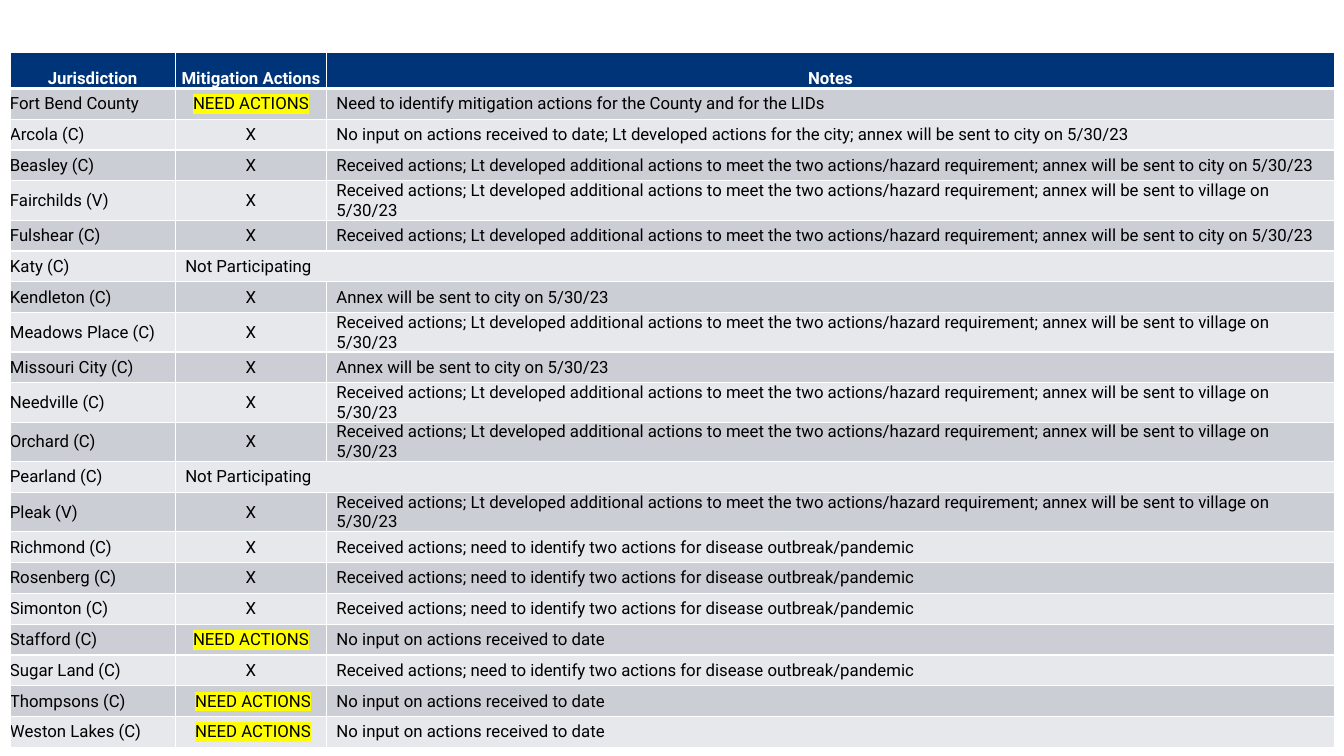
from dataclasses import dataclass

from lxml.etree import SubElement
from pptx import Presentation
from pptx.dml.color import RGBColor
from pptx.enum.text import MSO_ANCHOR, PP_ALIGN
from pptx.oxml import parse_xml
from pptx.oxml.ns import qn
from pptx.util import Cm, Pt


@dataclass(frozen=True)
class Theme:
    font: str = "Roboto"
    size: int = 12
    head: str = "003478"
    dark: str = "CCCED6"
    light: str = "E7E8EC"
    white: str = "FFFFFF"
    black: str = "000000"
    mark: str = "FFFF00"
    thin: int = 1
    thick: int = 3


THEME = Theme()
XMLNS = "http://schemas.openxmlformats.org/drawingml/2006/main"

# Table frame, in centimetres
LEFT, TOP = 0.25, 1.32
COLS = (4.17, 3.81, 25.4)
HEAD_H, BODY_H = 0.91, 15.52
PAD = 0.25

# Wording that recurs in the rows
NEED = "NEED ACTIONS"
OUT = "Not Participating"
MORE = ("Received actions; Lt developed additional actions to meet the two "
        "actions/hazard requirement; annex will be sent to {} on 5/30/23")
CITY, VILLAGE = MORE.format("city"), MORE.format("village")
ANNEX = "Annex will be sent to city on 5/30/23"
DISEASE = ("Received actions; need to identify two actions for "
           "disease outbreak/pandemic")
NONE_YET = "No input on actions received to date"

HEADS = ("Jurisdiction", "Mitigation Actions", "Notes")
ROWS = (
    ("Fort Bend County", NEED,
     "Need to identify mitigation actions for the County and for the LIDs"),
    ("Arcola (C)", "X",
     "No input on actions received to date; Lt developed actions for the "
     "city; annex will be sent to city on 5/30/23"),
    ("Beasley (C)", "X", CITY),
    ("Fairchilds (V)", "X", VILLAGE),
    ("Fulshear (C)", "X", CITY),
    ("Katy (C)", OUT, ""),
    ("Kendleton (C)", "X", ANNEX),
    ("Meadows Place (C)", "X", VILLAGE),
    ("Missouri City (C)", "X", ANNEX),
    ("Needville (C)", "X", VILLAGE),
    ("Orchard (C)", "X", VILLAGE),
    ("Pearland (C)", OUT, ""),
    ("Pleak (V)", "X", VILLAGE),
    ("Richmond (C)", "X", DISEASE),
    ("Rosenberg (C)", "X", DISEASE),
    ("Simonton (C)", "X", DISEASE),
    ("Stafford (C)", NEED, NONE_YET),
    ("Sugar Land (C)", "X", DISEASE),
    ("Thompsons (C)", " " + NEED, NONE_YET),
    ("Weston Lakes (C)", " " + NEED, NONE_YET),
)


def style(font, color, bold=False):
    font.name, font.size, font.bold = THEME.font, Pt(THEME.size), bold
    font.color.rgb = RGBColor.from_string(color)


def shade(run, color):
    """Highlight a run; the element must follow its fill."""
    fill = run.font._element.find(qn("a:solidFill"))
    fill.addnext(parse_xml(
        f'<a:highlight xmlns:a="{XMLNS}"><a:srgbClr val="{color}"/>'
        '</a:highlight>'))


def write(cell, text, color=THEME.black, bold=False, align=PP_ALIGN.LEFT,
          anchor=MSO_ANCHOR.MIDDLE, pad=0, mark=None):
    cell.vertical_anchor = anchor
    cell.margin_left = cell.margin_right = Cm(pad)
    cell.margin_top = cell.margin_bottom = 0
    para = cell.text_frame.paragraphs[0]
    para.alignment = align
    style(para.font, color, bold)
    body = text.lstrip()
    lead = text[:len(text) - len(body)]
    for part in filter(None, (lead, body)):
        run = para.add_run()
        run.text = part
        style(run.font, color, bold)
        if mark and part == body:
            shade(run, mark)


def paint(cell, color, top=THEME.thin, base=THEME.thin):
    """Give a cell its borders, then its fill."""
    props = cell._tc.get_or_add_tcPr()
    for side, width in zip("LRTB", (THEME.thin, THEME.thin, top, base)):
        line = SubElement(props, qn(f"a:ln{side}"), w=str(Pt(width)))
        fill = SubElement(line, qn("a:solidFill"))
        SubElement(fill, qn("a:srgbClr"), val=THEME.white)
    cell.fill.solid()
    cell.fill.fore_color.rgb = RGBColor.from_string(color)


def add_grid(slide):
    frame = slide.shapes.add_table(
        len(ROWS) + 1, len(COLS), Cm(LEFT), Cm(TOP),
        Cm(sum(COLS)), Cm(HEAD_H + BODY_H))
    table = frame.table
    table.horz_banding = False
    for col, width in zip(table.columns, COLS):
        col.width = Cm(width)
    for num, row in enumerate(table.rows):
        row.height = Cm(BODY_H / len(ROWS) if num else HEAD_H)
    return table


def fill_head(table):
    for col, text in enumerate(HEADS):
        cell = table.cell(0, col)
        paint(cell, THEME.head, base=THEME.thick)
        write(cell, text, color=THEME.white, bold=True,
              align=PP_ALIGN.CENTER, anchor=MSO_ANCHOR.BOTTOM)


def fill_row(table, num, name, state, note):
    cells = [table.cell(num, col) for col in range(len(COLS))]
    for cell in cells:
        paint(cell, THEME.dark if num % 2 else THEME.light,
              top=THEME.thick if num == 1 else THEME.thin)
    write(cells[0], name)
    write(cells[1], state, pad=PAD,
          align=PP_ALIGN.LEFT if state == OUT else PP_ALIGN.CENTER,
          mark=THEME.mark if NEED in state else None)
    write(cells[2], note, pad=PAD)
    if state == OUT:
        cells[1].merge(cells[2])


def main():
    deck = Presentation()
    deck.slide_width, deck.slide_height = Cm(33.87), Cm(19.05)
    slide = deck.slides.add_slide(deck.slide_layouts[6])

    # Status of each jurisdiction
    table = add_grid(slide)
    fill_head(table)
    for num, row in enumerate(ROWS, 1):
        fill_row(table, num, *row)

    deck.save("out.pptx")


if __name__ == "__main__":
    main()
